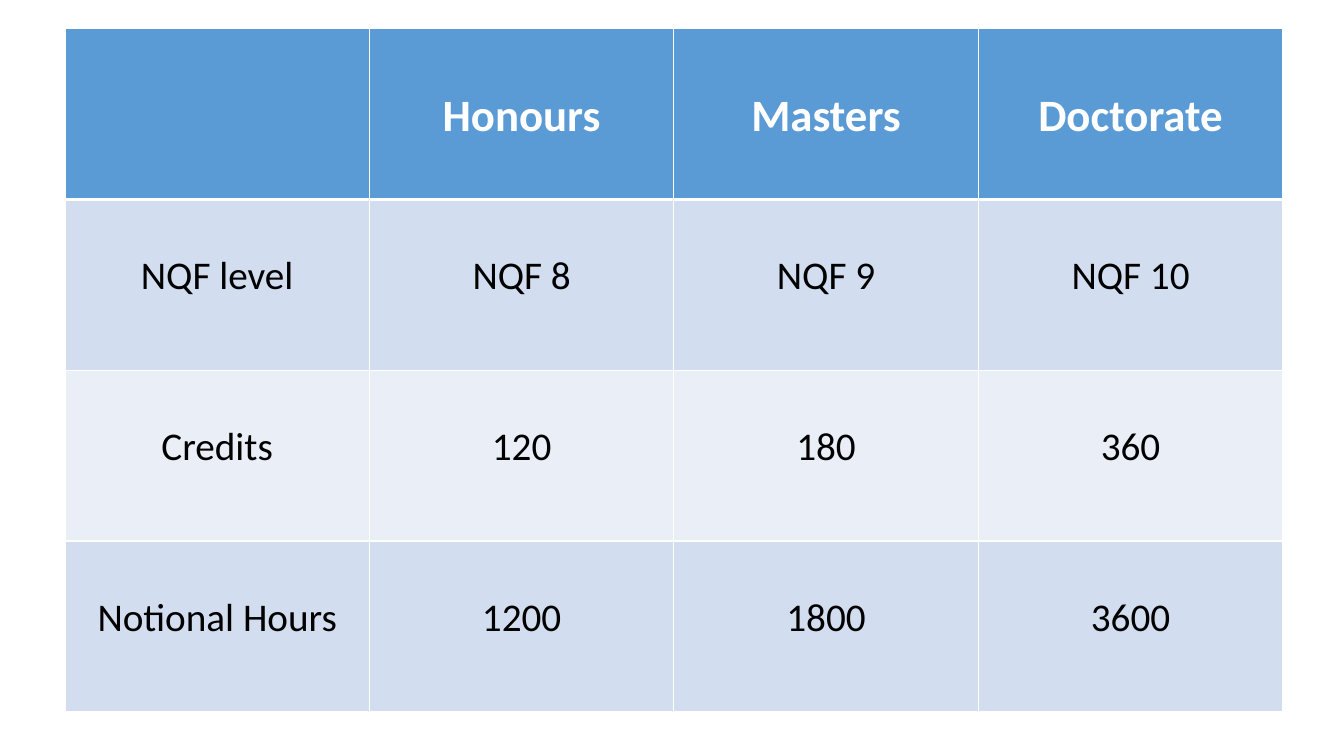
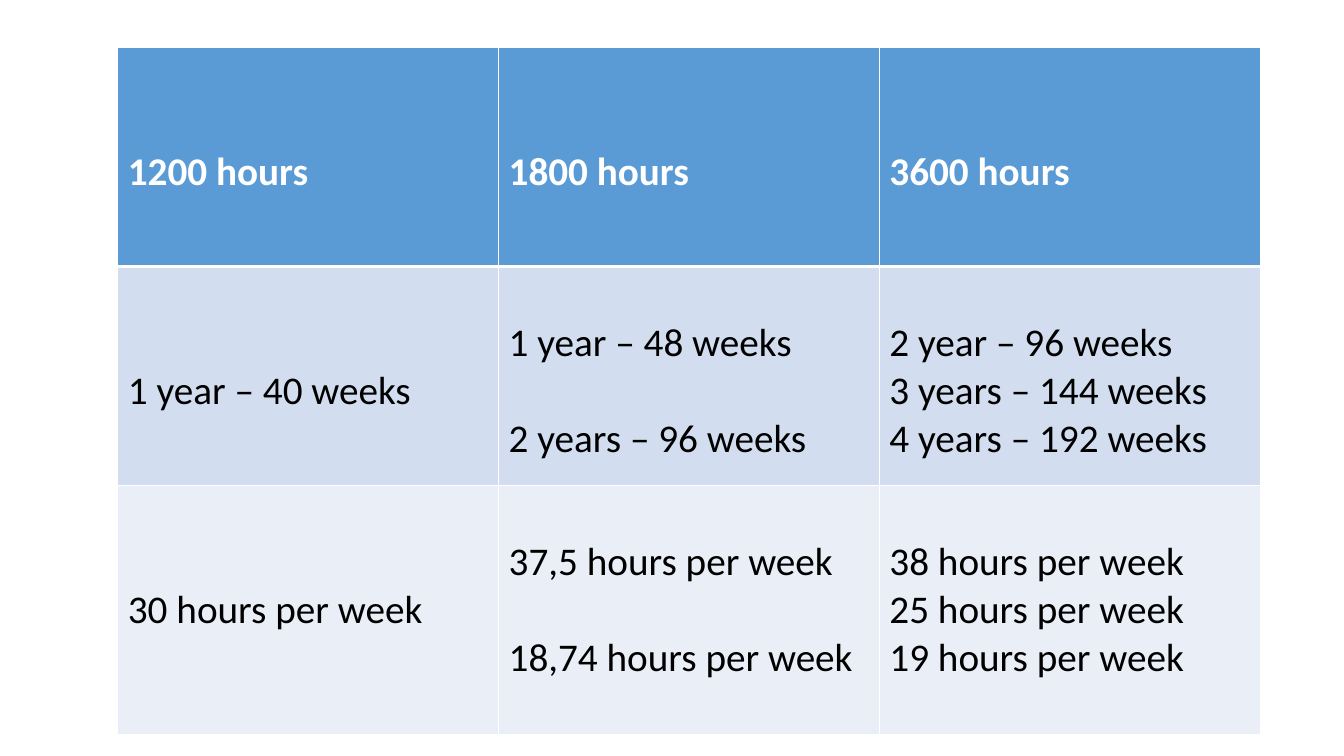
from pptx import Presentation
from pptx.dml.color import RGBColor
from pptx.enum.text import MSO_ANCHOR as Anchor, PP_ALIGN as Align
from pptx.oxml.ns import qn
from pptx.util import Pt
from lxml.etree import SubElement

# Shared look
FONT = "Calibri"
WHITE = RGBColor(0xFF, 0xFF, 0xFF)
BLACK = RGBColor(0x00, 0x00, 0x00)
HEADER_BLUE = RGBColor(0x5B, 0x9B, 0xD5)
BANDS = [RGBColor(0xD2, 0xDE, 0xEF), RGBColor(0xEA, 0xEF, 0xF7)]
THIN, THICK = 1, 3
BODY_SIZE = 28
LINE_HEIGHT = 1.22  # line height of the font, in ems
CELL_MARGIN = 3.6

# Table contents, header row first; a line break starts a new paragraph
LEVELS = [
    ["", "Honours", "Masters", "Doctorate"],
    ["NQF level", "NQF 8", "NQF 9", "NQF 10"],
    ["Credits", "120", "180", "360"],
    ["Notional Hours", "1200", "1800", "3600"],
]
WORKLOAD = [
    ["1200 hours", "1800 hours", "3600 hours"],
    ["1 year – 40 weeks",
     "1 year – 48 weeks\n2 years – 96 weeks",
     "2 year – 96 weeks\n3 years – 144 weeks\n4 years – 192 weeks"],
    ["30 hours per week",
     "37,5 hours per week\n18,74 hours per week",
     "38 hours per week\n25 hours per week\n19 hours per week"],
]


def set_borders(cell, top, bottom):
    """Draw white lines on all four sides; call before filling the cell."""
    properties = cell._tc.get_or_add_tcPr()
    for side, width in (("L", THIN), ("R", THIN), ("T", top), ("B", bottom)):
        line = SubElement(properties, qn(f"a:ln{side}"), w=str(Pt(width)))
        fill = SubElement(line, qn("a:solidFill"))
        SubElement(fill, qn("a:srgbClr"), val=str(WHITE))


def write_cell(cell, text, size, align, lead, is_header):
    """Write the lines below a lead; two lines stand one line apart."""
    line_height = size * LINE_HEIGHT
    lines = text.split("\n")
    cell.vertical_anchor = Anchor.TOP
    cell.margin_top = Pt(CELL_MARGIN + lead * line_height)
    for index, line in enumerate(lines):
        frame = cell.text_frame
        para = frame.add_paragraph() if index else frame.paragraphs[0]
        para.alignment = align
        if index and len(lines) == 2:
            para.space_before = Pt(line_height)
        if line:
            span = para.add_run()
            span.text = line
            span.font.name = FONT
            span.font.size = Pt(size)
            span.font.bold = is_header
            span.font.color.rgb = WHITE if is_header else BLACK


def add_banded_table(deck, rows, left, top, column_width, row_heights,
                     header_size, align, single_lead):
    """Add a slide with one table; single_lead is the lead of one-line cells."""
    page = deck.slides.add_slide(deck.slide_layouts.get_by_name("Blank"))
    columns = len(rows[0])
    table = page.shapes.add_table(
        len(rows), columns, Pt(left), Pt(top),
        Pt(column_width * columns), Pt(sum(row_heights))).table
    table.horz_banding = False
    for column in table.columns:
        column.width = Pt(column_width)
    for index, texts in enumerate(rows):
        is_header = index == 0
        table.rows[index].height = Pt(row_heights[index])
        for cell, text in zip(table.rows[index].cells, texts):
            set_borders(cell, top=THICK if index == 1 else THIN,
                        bottom=THICK if is_header else THIN)
            cell.fill.solid()
            cell.fill.fore_color.rgb = (
                HEADER_BLUE if is_header else BANDS[(index - 1) % 2])
            write_cell(cell, text, header_size if is_header else BODY_SIZE,
                       align, 1 if "\n" in text else single_lead, is_header)


def main():
    deck = Presentation()
    deck.slide_width, deck.slide_height = Pt(960), Pt(540)

    # Qualification levels, credits and hours
    add_banded_table(deck, LEVELS, left=46.4, top=20.5, column_width=217.5,
                     row_heights=[122] * 4, header_size=32,
                     align=Align.CENTER, single_lead=1)

    # Weeks and weekly hours
    add_banded_table(deck, WORKLOAD, left=84.2, top=34, column_width=272,
                     row_heights=[156.5, 156.5, 178], header_size=BODY_SIZE,
                     align=Align.LEFT, single_lead=2)

    deck.save("out.pptx")


if __name__ == "__main__":
    main()
